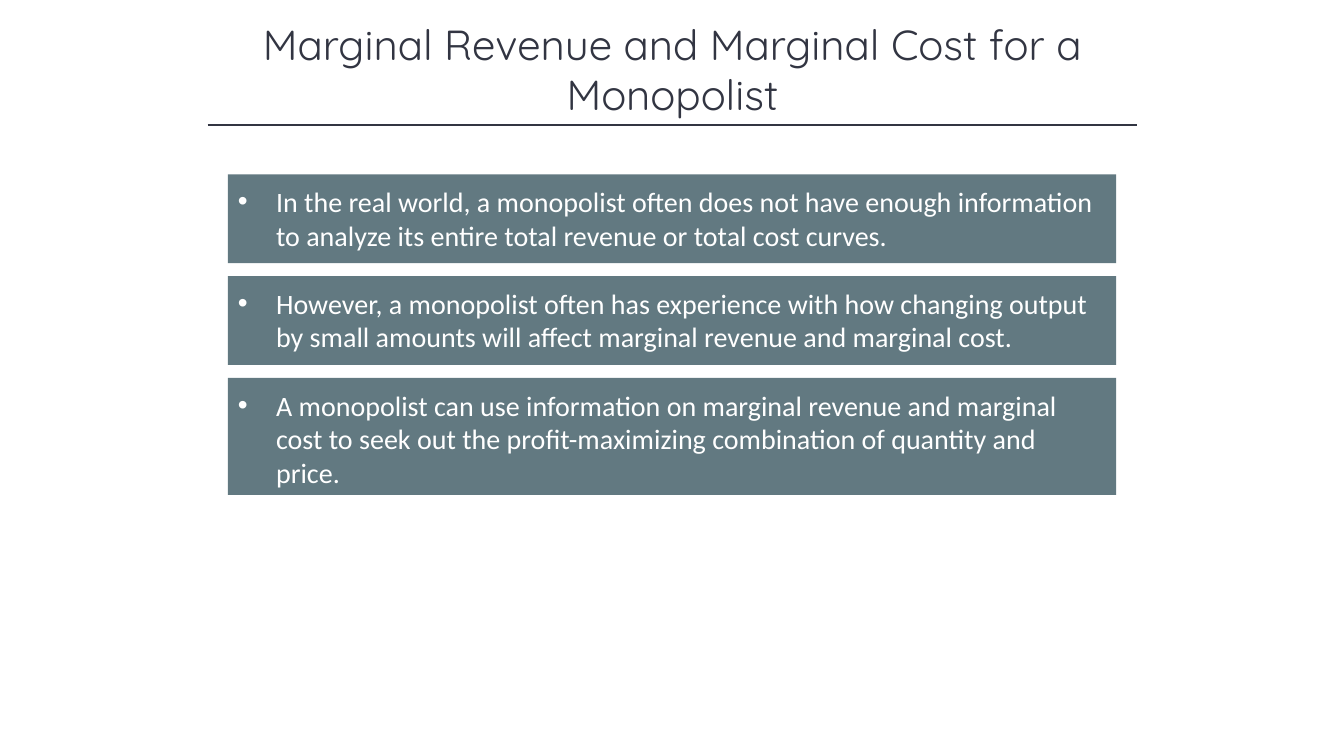
from lxml.etree import SubElement
from pptx import Presentation
from pptx.dml.color import RGBColor
from pptx.enum.shapes import MSO_CONNECTOR, MSO_SHAPE
from pptx.enum.text import MSO_ANCHOR, PP_ALIGN
from pptx.oxml.ns import qn
from pptx.util import Inches, Pt

INK = RGBColor(0x32, 0x35, 0x42)
SLATE = RGBColor(0x62, 0x79, 0x81)
WHITE = RGBColor(0xFF, 0xFF, 0xFF)

TITLE = "Marginal Revenue and Marginal Cost for a Monopolist"
POINTS = [
    ("In the real world, a monopolist often does not have enough information "
     "to analyze its entire total revenue or total cost curves.", 0.88),
    ("However, a monopolist often has experience with how changing output by "
     "small amounts will affect marginal revenue and marginal cost.", 0.88),
    ("A monopolist can use information on marginal revenue and marginal cost "
     "to seek out the profit-maximizing combination of quantity and price.", 1.16),
]
PANEL_GAP = 0.13


def write_text(shape, text, *, font, size, color, align=PP_ALIGN.LEFT, bullet=None):
    frame = shape.text_frame
    frame.word_wrap = True
    frame.vertical_anchor = MSO_ANCHOR.TOP
    paragraph = frame.paragraphs[0]
    paragraph.alignment = align
    run = paragraph.add_run()
    run.text = text
    run.font.name = font
    run.font.size = Pt(size)
    run.font.color.rgb = color
    if bullet:
        properties = paragraph._p.get_or_add_pPr()
        properties.set("marL", str(Inches(0.38)))
        properties.set("indent", str(-Inches(0.38)))
        SubElement(properties, qn("a:buFont")).set("typeface", "Arial")
        SubElement(properties, qn("a:buChar")).set("char", bullet)


def add_title(slide, left, top, width, height):
    title = slide.shapes.add_textbox(Inches(left), Inches(top), Inches(width), Inches(height))
    write_text(title, TITLE, font="Quicksand", size=30, color=INK, align=PP_ALIGN.CENTER)
    center, bottom, half_rule = left + width / 2, top + height, 4.61
    rule = slide.shapes.add_connector(
        MSO_CONNECTOR.STRAIGHT,
        Inches(center - half_rule), Inches(bottom),
        Inches(center + half_rule), Inches(bottom),
    )
    rule.line.color.rgb = INK
    rule.line.width = Pt(1)
    SubElement(rule._element.spPr, qn("a:effectLst"))


def add_points(slide, left, top, width):
    for text, height in POINTS:
        panel = slide.shapes.add_shape(
            MSO_SHAPE.RECTANGLE, Inches(left), Inches(top), Inches(width), Inches(height)
        )
        panel.shadow.inherit = False
        panel.fill.solid()
        panel.fill.fore_color.rgb = SLATE
        panel.line.fill.background()
        panel.text_frame.margin_top = Inches(0.1)
        panel.text_frame.margin_right = Inches(0.2)
        write_text(panel, text, font="Calibri", size=20, color=WHITE, bullet="•")
        top += height + PANEL_GAP


def main():
    presentation = Presentation()
    presentation.slide_width = Inches(13.33)
    presentation.slide_height = Inches(7.5)
    slide = presentation.slides.add_slide(presentation.slide_layouts[6])
    add_title(slide, 1.67, 0.13, 10, 1.11)
    add_points(slide, 2.26, 1.73, 8.81)
    presentation.save("out.pptx")


if __name__ == "__main__":
    main()
